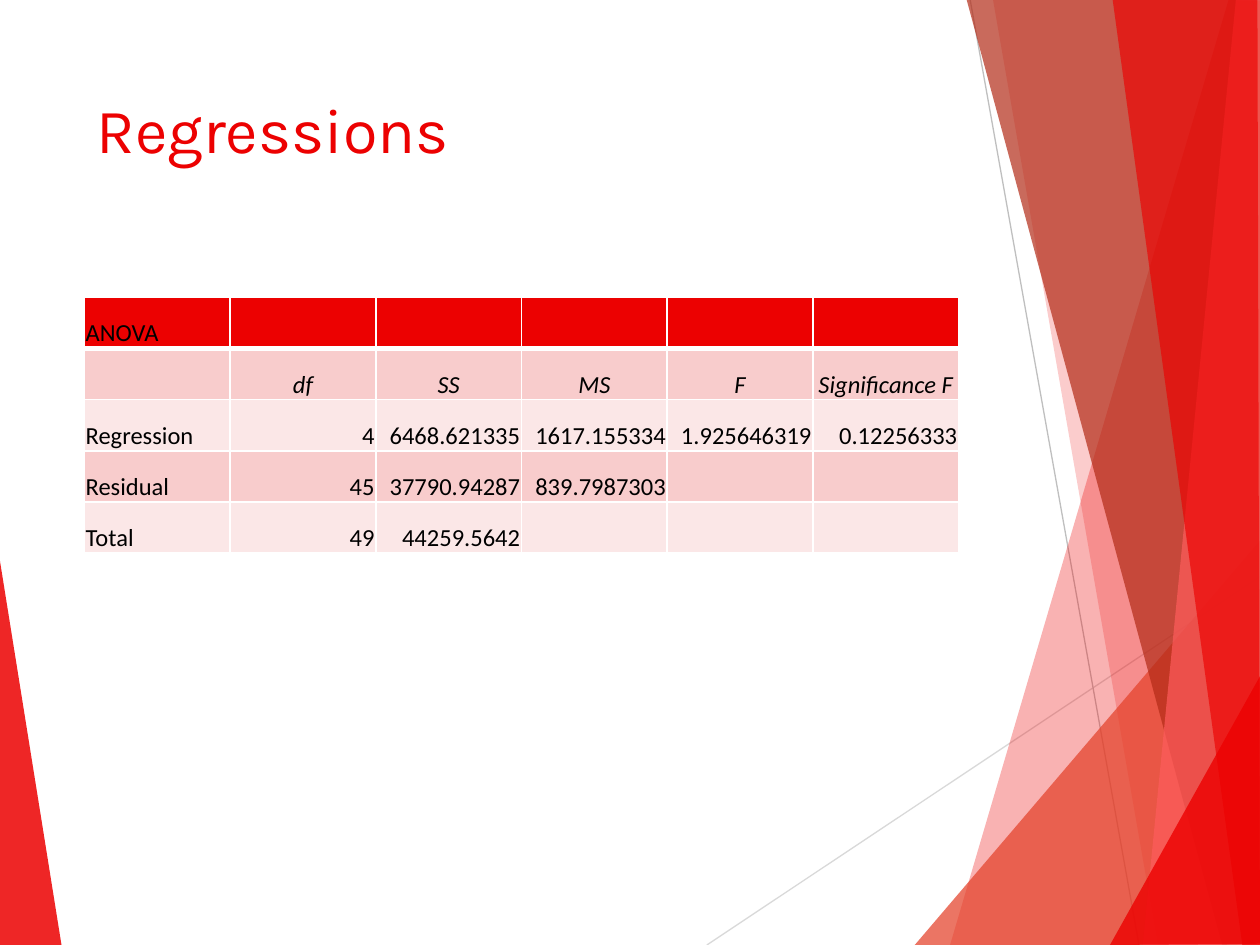
from lxml.etree import SubElement
from pptx import Presentation
from pptx.dml.color import RGBColor
from pptx.enum.shapes import MSO_CONNECTOR
from pptx.enum.text import MSO_ANCHOR, PP_ALIGN
from pptx.oxml.ns import qn
from pptx.util import Inches, Pt


def paint(fill, tint, alpha=100):
    fill.solid()
    fill.fore_color.rgb = RGBColor.from_string(tint)
    if alpha < 100:
        node = fill._xPr.find(qn("a:solidFill"))[0]
        SubElement(node, qn("a:alpha"), val=str(alpha * 1000))


def write(para, text, font, size, tint, slant=False):
    run = para.add_run()
    run.text = text
    run.font.name = font
    run.font.size = Pt(size)
    run.font.bold = False
    run.font.italic = slant
    paint(run.font.fill, tint)


deck = Presentation()
deck.slide_width, deck.slide_height = Inches(10), Inches(7.5)
slide = deck.slides.add_slide(deck.slide_layouts[6])
shapes = slide.shapes

RED = "EC0101"
lines = [
    (5.61, 7.5, 10.01, 4.57, "D9D9D9"),
    (7.7, 0, 9.04, 7.5, "BFBFBF"),
]
shards = [
    (RED, 85, [(-0.01, 4.39), (0.49, 7.51), (-0.01, 7.5)]),
    (RED, 30, [(9.75, 0), (7.54, 7.5), (10.02, 7.51), (10.01, 0.01)]),
    (RED, 20, [(7.88, -0.01), (9.19, 7.5), (10.01, 7.5), (10.01, -0.01)]),
    ("E44129", 72, [(7.26, 7.5), (10, 4.29), (10.01, 7.5)]),
    ("B32B17", 70, [(7.67, -0.01), (9.7, 7.5), (10.01, 7.49), (10.01, -0.01)]),
    ("FE5C5C", 70, [(9.81, -0.01), (9.07, 7.5), (10.01, 7.5), (10, -0.01)]),
    (RED, 65, [(8.83, -0.01), (9.86, 7.5), (10, 7.5), (9.98, -0.01)]),
    (RED, 80, [(8.81, 7.5), (10.01, 5.35), (10.01, 7.49)]),
]

for *ends, tint in lines:
    line = shapes.add_connector(MSO_CONNECTOR.STRAIGHT, *map(Inches, ends))
    line.line.width = Pt(0.75)
    paint(line.line.fill, tint)
    SubElement(line._element.spPr, qn("a:effectLst"))

for tint, alpha, points in shards:
    start, *rest = [(Inches(x), Inches(y)) for x, y in points]
    pen = shapes.build_freeform(*start)
    pen.add_line_segments(rest, close=True)
    shard = pen.convert_to_shape()
    shard.shadow.inherit = False
    shard.line.fill.background()
    paint(shard.fill, tint, alpha)

title = shapes.add_textbox(Inches(0.67), Inches(0.67), Inches(6.94), Inches(1.44))
title.text_frame.word_wrap = True
title.text_frame.vertical_anchor = MSO_ANCHOR.TOP
write(title.text_frame.paragraphs[0], "Regressions", "Karla", 36, RED)

rows = [
    ["ANOVA", "", "", "", "", ""],
    ["", "df", "SS", "MS", "F", "Significance F"],
    ["Regression", "4", "6468.621335", "1617.155334", "1.925646319", "0.12256333"],
    ["Residual", "45", "37790.94287", "839.7987303", "", ""],
    ["Total", "49", "44259.5642", "", "", ""],
]
fills = [RED, "F8CCCC", "FBE7E7", "F8CCCC", "FBE7E7"]
frame = shapes.add_table(
    len(rows), len(rows[0]), Inches(0.67), Inches(2.36), Inches(6.94), Inches(2.03)
)
table = frame.table

for r, row in enumerate(rows):
    for c, text in enumerate(row):
        cell = table.cell(r, c)
        props = cell._tc.get_or_add_tcPr()
        for side in "LRTB":
            thick = (r, side) in [(0, "B"), (1, "T")]
            width = Pt(3 if thick else 1)
            edge = SubElement(props, qn("a:ln" + side), w=str(width))
            solid = SubElement(edge, qn("a:solidFill"))
            SubElement(solid, qn("a:srgbClr"), val="FFFFFF")
        paint(cell.fill, fills[r])
        if not text:
            continue
        cell.vertical_anchor = MSO_ANCHOR.BOTTOM
        cell.margin_left = cell.margin_right = cell.margin_top = Inches(0.01)
        cell.margin_bottom = 0
        para = cell.text_frame.paragraphs[0]
        if c == 0:
            para.alignment = PP_ALIGN.LEFT
        else:
            para.alignment = PP_ALIGN.CENTER if r == 1 else PP_ALIGN.RIGHT
        write(para, text, "Calibri", 14, "000000", r == 1)

deck.save("out.pptx")
